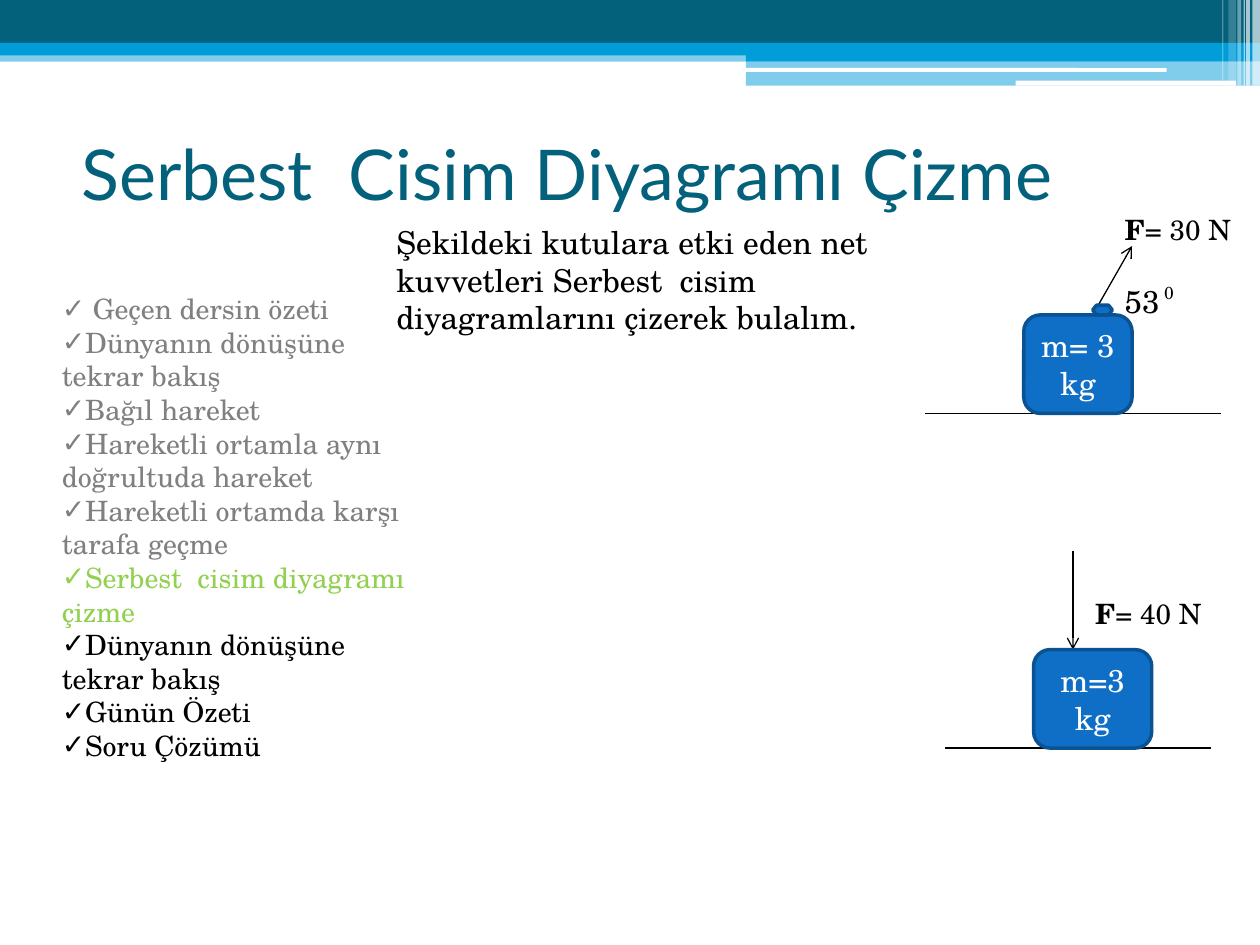
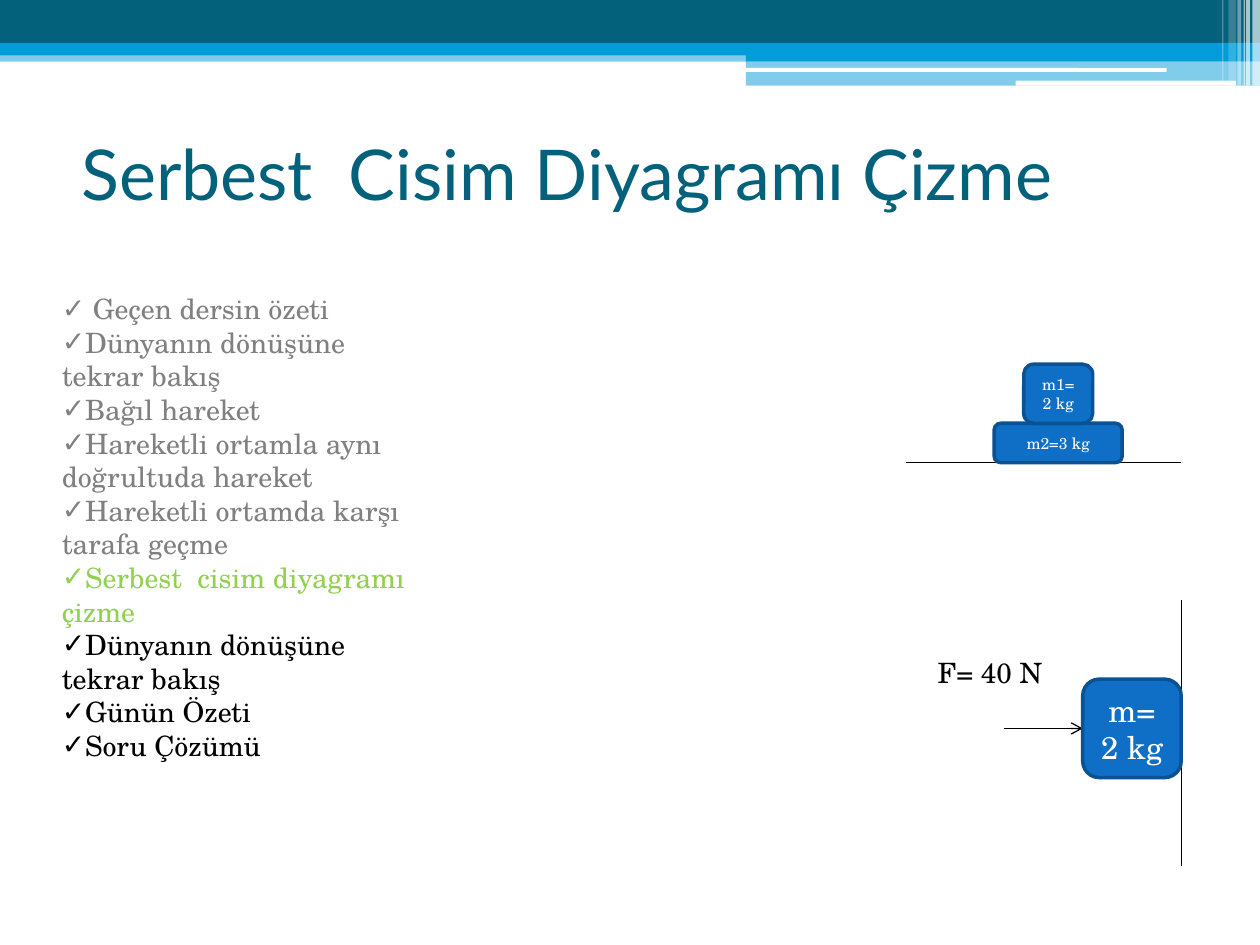
from dataclasses import dataclass

from lxml.etree import SubElement
from pptx import Presentation
from pptx.dml.color import RGBColor
from pptx.enum.shapes import MSO_CONNECTOR, MSO_SHAPE
from pptx.enum.text import MSO_ANCHOR, MSO_AUTO_SIZE, PP_ALIGN
from pptx.oxml.ns import qn
from pptx.util import Emu, Inches, Pt


@dataclass(frozen=True)
class Theme:
    heading: str = "Lato"
    text: str = "TeX Gyre Schola"
    teal: str = "04617B"
    sky: str = "009DD9"
    white: str = "FFFFFF"
    black: str = "000000"
    done: str = "808080"
    current: str = "92D050"
    box: str = "0F6FC6"
    edge: str = "0B5292"
    title_size: int = 40
    body_size: int = 18
    list_size: int = 16
    degree_size: int = 10
    small_size: int = 9


TH = Theme()
RECT, ROUND = MSO_SHAPE.RECTANGLE, MSO_SHAPE.ROUNDED_RECTANGLE
HEX = MSO_SHAPE.FLOWCHART_PREPARATION

prs = Presentation()
prs.slide_width, prs.slide_height = Inches(10), Inches(7.5)


def at(*cells, columns=128):
    return [Emu(round(c * prs.slide_width / columns)) for c in cells]


def style(p, size, color, font=TH.text, align=PP_ALIGN.LEFT):
    p.alignment = align
    for r in p.runs:
        r.font.size = Pt(size)
        r.font.name = font
        r.font.color.rgb = RGBColor.from_string(color)


TITLE = "Serbest  Cisim Diyagramı Çizme"
TOPICS = [
    (" Geçen dersin özeti", TH.done),
    ("Dünyanın dönüşüne tekrar bakış", TH.done),
    ("Bağıl hareket", TH.done),
    ("Hareketli ortamla aynı doğrultuda hareket", TH.done),
    ("Hareketli ortamda karşı tarafa geçme", TH.done),
    ("Serbest  cisim diyagramı çizme", TH.current),
    ("Dünyanın dönüşüne tekrar bakış", TH.black),
    ("Günün Özeti", TH.black),
    ("Soru Çözümü", TH.black),
]
QUESTION = ("Şekildeki kutulara etki eden net kuvvetleri Serbest  cisim "
            "diyagramlarını çizerek bulalım.")

BANDS = [
    (RECT, (0, 4, 100, 0.9), TH.sky, 50),
    (RECT, (0, 0, 100, 3.4), TH.teal, 100),
    (RECT, (0, 3.4, 100, 1), TH.sky, 100),
    (RECT, (59.2, 3.9, 40.8, 0.95), TH.sky, 100),
    (RECT, (59.2, 4.85, 40.8, 1.95), TH.sky, 50),
    (ROUND, (59.1, 5.4, 33.5, 0.3), TH.white, 100),
    (ROUND, (80.6, 6.4, 17.5, 0.4), TH.white, 100),
    (RECT, (99.4, 0, 0.6, 6.8), TH.white, 65),
    (RECT, (98.9, 0, 0.3, 6.8), TH.white, 65),
    (RECT, (98.7, 0, 0.1, 6.8), TH.white, 60),
    (RECT, (98.2, 0, 0.3, 6.8), TH.white, 40),
    (RECT, (97.5, 0, 0.6, 6.4), TH.white, 20),
    (RECT, (97, 0, 0.1, 6.4), TH.white, 30),
]

SCENES = [
    dict(
        lines=[
            ((94, 42), (124, 42), False),
            ((111, 32), (115, 25), True),
            ((123, 76), (96, 76), False),
            ((109, 56), (109, 66), True),
        ],
        boxes=[
            (ROUND, (104, 32, 11, 10), "m= 3 kg", TH.body_size),
            (HEX, (111, 31, 2, 1), "", TH.small_size),
            (ROUND, (105, 66, 12, 10), "m=3 kg", TH.body_size),
        ],
        labels=[
            ((113, 21, 15, 5), "F", "= 30 N", TH.list_size),
            ((113, 28, 10, 5), "", "53", TH.body_size),
            ((117, 28, 3, 3.5), "", "0", TH.degree_size),
            ((110, 60, 15, 5), "F", "= 40 N", TH.list_size),
            ((39, 22, 62, 13), "", QUESTION, TH.body_size),
        ],
    ),
    dict(
        lines=[
            ((120, 61), (120, 88), False),
            ((102, 74), (110, 74), True),
            ((92, 47), (120, 47), False),
        ],
        boxes=[
            (ROUND, (110, 69, 10, 10), "m=2 kg", TH.body_size),
            (ROUND, (101, 43, 13, 4), "m2=3 kg", TH.small_size),
            (ROUND, (104, 37, 7, 6), "m1=2 kg", TH.small_size),
        ],
        labels=[((94, 66, 15, 5), "", "F= 40 N", TH.list_size)],
    ),
]

layout = prs.slide_layouts[1]
for ph in list(layout.placeholders)[2:]:
    ph.element.getparent().remove(ph.element)
slides = [prs.slides.add_slide(layout) for scene in SCENES]

for i, (kind, cells, color, opacity) in enumerate(BANDS):
    sp = slides[0].shapes.add_shape(kind, *at(*cells, columns=100))
    sp.shadow.inherit = False
    sp.fill.solid()
    sp.fill.fore_color.rgb = RGBColor.from_string(color)
    sp.line.fill.background()
    if opacity < 100:
        rgb = sp.element.spPr.find(qn("a:solidFill"))[0]
        SubElement(rgb, qn("a:alpha"), val=str(opacity * 1000))
    layout.shapes.element.insert(2 + i, sp.element)

for ph, cells in zip(layout.placeholders, [(7, 10, 115, 15), (5, 29, 38, 49.5)]):
    ph.left, ph.top, ph.width, ph.height = at(*cells)

for s, scene in zip(slides, SCENES):
    title, body = s.placeholders
    tf = title.text_frame
    tf.text = TITLE
    tf.auto_size = MSO_AUTO_SIZE.NONE
    tf.vertical_anchor = MSO_ANCHOR.MIDDLE
    style(tf.paragraphs[0], TH.title_size, TH.teal, TH.heading)

    tf = body.text_frame
    tf.text = "\n".join(topic for topic, color in TOPICS)
    tf.auto_size = MSO_AUTO_SIZE.NONE
    for p, (topic, color) in zip(tf.paragraphs, TOPICS):
        style(p, TH.list_size, color)
        p.space_before = Pt(0)
        pPr = p._p.get_or_add_pPr()
        pPr.set("marL", "0")
        pPr.set("indent", "0")
        SubElement(pPr, qn("a:buChar"), char="✓")

    for start, end, arrow in scene["lines"]:
        line = s.shapes.add_connector(MSO_CONNECTOR.STRAIGHT, *at(*start, *end))
        line.line.color.rgb = RGBColor.from_string(TH.black)
        line.line.width = Pt(0.75)
        if arrow:
            SubElement(line.line._get_or_add_ln(), qn("a:tailEnd"), type="arrow")
        SubElement(line.element.spPr, qn("a:effectLst"))

    for kind, cells, mass, size in scene["boxes"]:
        sp = s.shapes.add_shape(kind, *at(*cells))
        sp.shadow.inherit = False
        sp.fill.solid()
        sp.fill.fore_color.rgb = RGBColor.from_string(TH.box)
        sp.line.color.rgb = RGBColor.from_string(TH.edge)
        sp.line.width = Pt(2)
        if mass:
            tf = sp.text_frame
            tf.text = mass
            tf.vertical_anchor = MSO_ANCHOR.MIDDLE
            style(tf.paragraphs[0], size, TH.white, align=PP_ALIGN.CENTER)

    for cells, symbol, text, size in scene["labels"]:
        tf = s.shapes.add_textbox(*at(*cells)).text_frame
        tf.word_wrap = True
        p = tf.paragraphs[0]
        if symbol:
            p.text = symbol
            p.runs[0].font.bold = True
        p.add_run().text = text
        style(p, size, TH.black)

prs.save("out.pptx")
